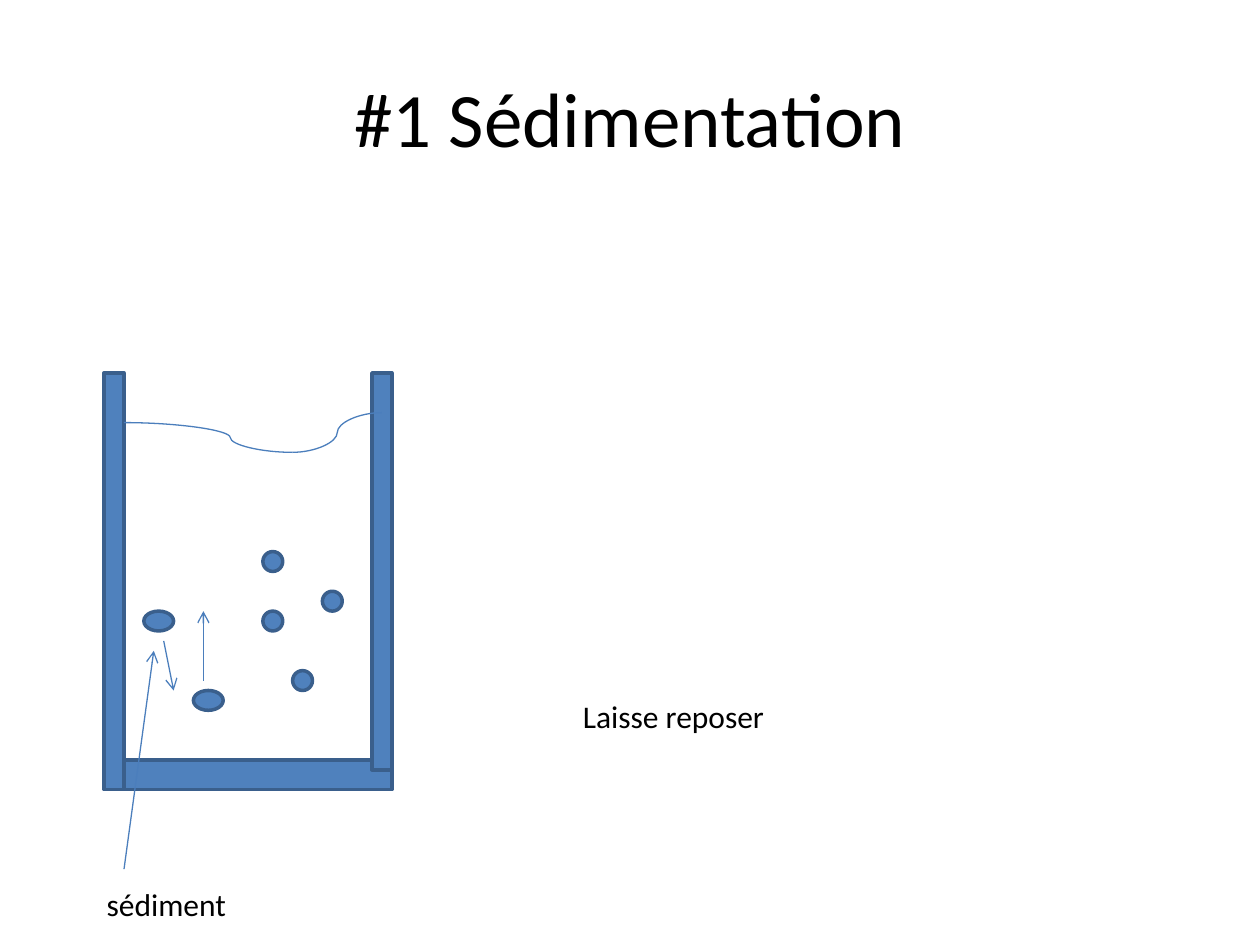
from dataclasses import dataclass

from lxml.etree import SubElement
from pptx import Presentation
from pptx.dml.color import RGBColor
from pptx.enum.shapes import MSO_CONNECTOR, MSO_SHAPE
from pptx.enum.text import MSO_ANCHOR, PP_ALIGN
from pptx.oxml.ns import qn
from pptx.slide import Slide
from pptx.util import Inches, Mm, Pt

COLORS = {"glass": "4F81BD", "edge": "3A5F8C", "stroke": "4B7EBC", "ink": "000000"}
WIDTH, HEIGHT = Inches(10), Inches(7.5)
CELL = Mm(2)
LEFT, TOP = Mm(1), Mm(1.2)


def color(name):
    return RGBColor.from_string(COLORS[name])


def cells(col, row, cols, rows):
    return LEFT + col * CELL, TOP + row * CELL, cols * CELL, rows * CELL


def shares(left, top, width, height):
    return int(left * WIDTH), int(top * HEIGHT), int(width * WIDTH), int(height * HEIGHT)


@dataclass
class Sketch:
    slide: Slide
    font: str = "Calibri"
    outline: float = 2
    stroke: float = 0.75

    def text(self, wording, box, size=18, align=PP_ALIGN.LEFT, anchor=MSO_ANCHOR.TOP):
        frame = self.slide.shapes.add_textbox(*box).text_frame
        frame.word_wrap = True
        frame.vertical_anchor = anchor
        paragraph = frame.paragraphs[0]
        paragraph.alignment = align
        run = paragraph.add_run()
        run.text = wording
        for key, value in {"name": self.font, "size": Pt(size)}.items():
            setattr(run.font, key, value)
        run.font.color.rgb = color("ink")

    def solid(self, preset, col, row, cols, rows):
        body = self.slide.shapes.add_shape(preset, *cells(col, row, cols, rows))
        body.shadow.inherit = False
        body.fill.solid()
        body.fill.fore_color.rgb = color("glass")
        body.line.color.rgb = color("edge")
        body.line.width = Pt(self.outline)

    def wall(self, *place):
        self.solid(MSO_SHAPE.RECTANGLE, *place)

    def grain(self, col, row, cols=2):
        self.solid(MSO_SHAPE.FLOWCHART_CONNECTOR, col, row, cols, 2)

    def connector(self, kind, start, end):
        ends = [*cells(*start, 0, 0)[:2], *cells(*end, 0, 0)[:2]]
        link = self.slide.shapes.add_connector(kind, *ends)
        link.line.color.rgb = color("stroke")
        link.line.width = Pt(self.stroke)
        SubElement(link._element.spPr, qn("a:effectLst"))
        return link

    def arrow(self, start, end):
        link = self.connector(MSO_CONNECTOR.STRAIGHT, start, end)
        SubElement(link.line._get_or_add_ln(), qn("a:tailEnd"), type="arrow")

    def wave(self, start, end, bend=0.5):
        link = self.connector(MSO_CONNECTOR.CURVE, start, end)
        adjustments = link._element.spPr.find(qn("a:prstGeom")).find(qn("a:avLst"))
        SubElement(adjustments, qn("a:gd"), name="adj1", fmla=f"val {round(bend * 100000)}")


def main():
    deck = Presentation()
    for key, value in {"slide_width": WIDTH, "slide_height": HEIGHT}.items():
        setattr(deck, key, value)
    sketch = Sketch(deck.slides.add_slide(deck.slide_layouts[6]))

    sketch.text("#1 Sédimentation", shares(0.05, 0.04, 0.9, 1 / 6), 44,
                PP_ALIGN.CENTER, MSO_ANCHOR.MIDDLE)

    for wall in [(10, 37, 2, 42), (12, 76, 27, 3), (37, 37, 2, 40)]:
        sketch.wall(*wall)
    sketch.wave((12, 42), (29, 45), 0.63)
    sketch.wave((29, 45), (38, 41))

    for grain in [(26, 55), (32, 59), (26, 61), (19, 69, 3), (29, 67), (14, 61, 3)]:
        sketch.grain(*grain)
    for start, end in [((16, 64), (17, 69)), ((20, 68), (20, 61)), ((12, 87), (15, 65))]:
        sketch.arrow(start, end)

    sketch.text("sédiment", cells(9, 88, 21, 5))
    sketch.text("Laisse reposer", cells(57, 69, 28, 5))
    deck.save("out.pptx")


if __name__ == "__main__":
    main()
